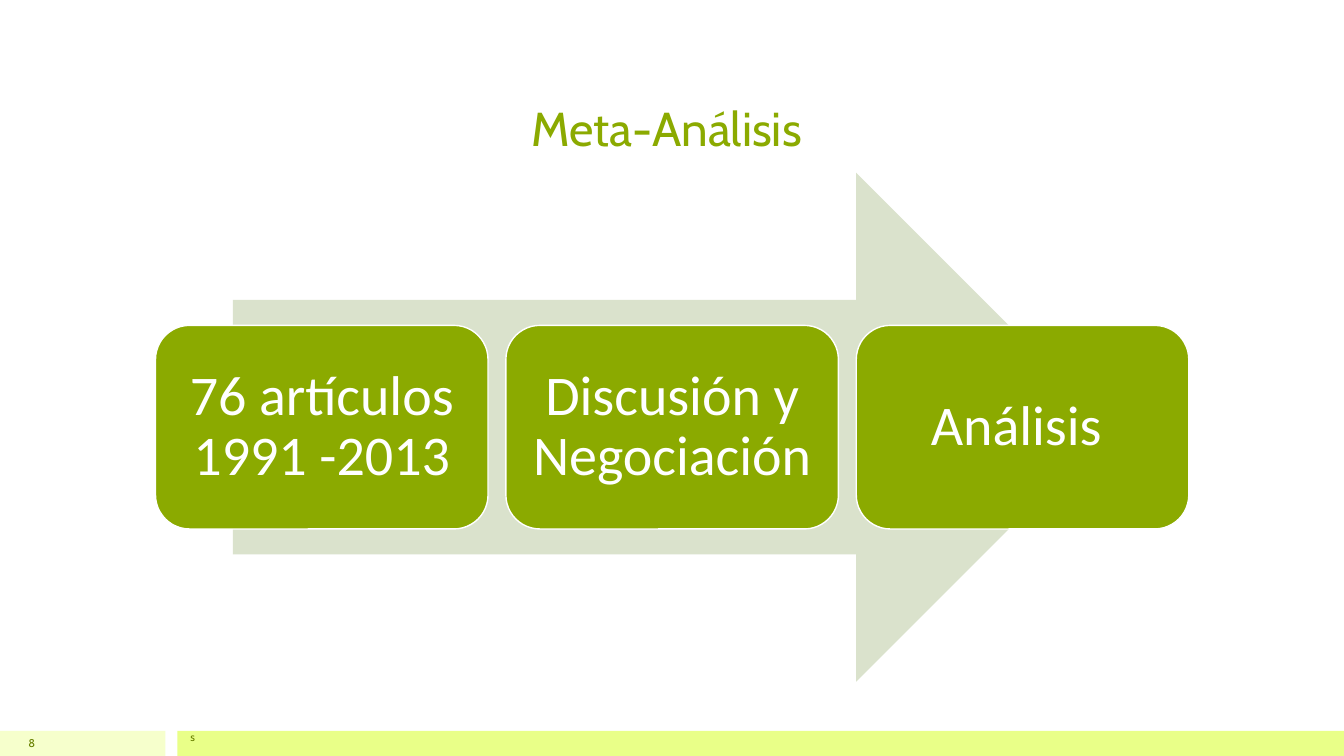
from pptx import Presentation
from pptx.dml.color import RGBColor
from pptx.enum.shapes import MSO_SHAPE as Shape
from pptx.enum.text import MSO_ANCHOR as Anchor, PP_ALIGN as Align
from pptx.util import Cm, Pt

COLORS = {
    "green": "8BAA00",
    "dark_green": "688000",
    "sage": "DAE2CC",
    "lime": "E9FF88",
    "pale_lime": "F6FFCC",
    "white": "FFFFFF",
}
STEPS = ["76 artículos 1991 -2013", "Discusión y Negociación", "Análisis "]


def rgb(name):
    return RGBColor.from_string(COLORS[name])


def write(frame, text, size=8, font="Cabin", color="dark_green", align=Align.LEFT,
          anchor=Anchor.MIDDLE, inset=(0.25, 0), spacing=1.0):
    frame.word_wrap = True
    frame.vertical_anchor = anchor
    frame.margin_left = frame.margin_right = Cm(inset[0])
    frame.margin_top = frame.margin_bottom = Cm(inset[1])
    paragraph = frame.paragraphs[0]
    paragraph.alignment = align
    paragraph.line_spacing = spacing
    run = paragraph.add_run()
    run.text = text
    run.font.size = Pt(size)
    run.font.name = font
    run.font.color.rgb = rgb(color)


def add_label(slide, box, text, **text_format):
    label = slide.shapes.add_textbox(*map(Cm, box))
    write(label.text_frame, text, **text_format)


def add_block(slide, kind, box, fill, line=None):
    block = slide.shapes.add_shape(kind, *map(Cm, box))
    block.shadow.inherit = False
    block.fill.solid()
    block.fill.fore_color.rgb = rgb(fill)
    if line:
        block.line.color.rgb = rgb(line)
        block.line.width = Pt(1)
    else:
        block.line.fill.background()
    return block


def add_process(slide):
    add_block(slide, Shape.RIGHT_ARROW, (5.87, 4.35, 22.12, 12.83), "sage")
    left, pitch = 3.92, 8.83
    for index, step in enumerate(STEPS):
        card = add_block(slide, Shape.ROUNDED_RECTANGLE,
                         (left + index * pitch, 8.2, 8.38, 5.13), "green", line="white")
        write(card.text_frame, step, size=40, font="Calibri", color="white",
              align=Align.CENTER, inset=(0.4, 0.4), spacing=0.9)


def main():
    deck = Presentation()
    deck.slide_width, deck.slide_height = Cm(33.87), Cm(19.05)
    slide = deck.slides.add_slide(deck.slide_layouts[6])

    # Footer bands
    add_block(slide, Shape.RECTANGLE, (0, 18.42, 4.17, 0.63), "pale_lime")
    add_block(slide, Shape.RECTANGLE, (4.47, 18.42, 29.4, 0.63), "lime")

    # Title
    add_label(slide, (3.91, 0.78, 26.04, 3.28), "Meta-Análisis ", size=34, color="green",
              align=Align.CENTER, anchor=Anchor.BOTTOM, inset=(0.25, 0.13))

    # Arrow with its steps
    add_process(slide)

    # Footer text and slide number
    add_label(slide, (4.55, 18.4, 25.4, 0.34), "s")
    add_label(slide, (0, 18.42, 1.14, 0.63), "8", align=Align.RIGHT)

    deck.save("out.pptx")


if __name__ == "__main__":
    main()
